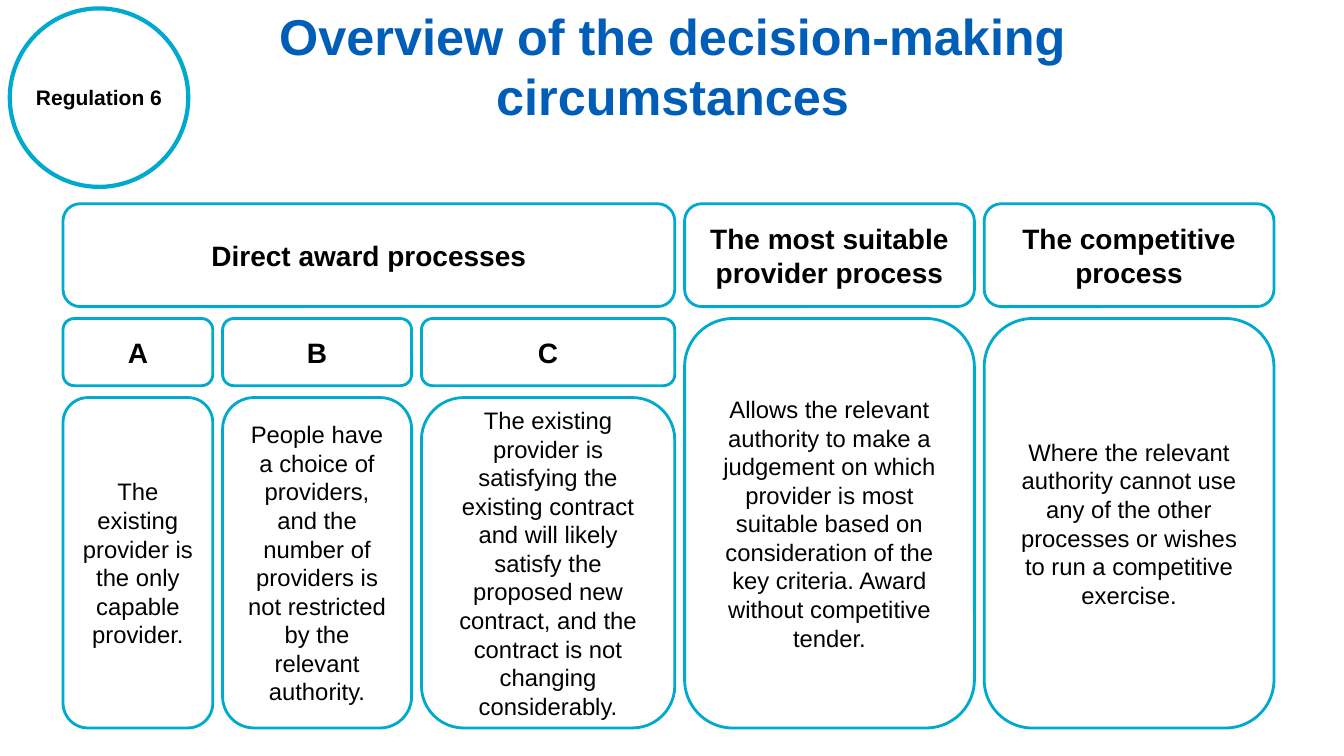
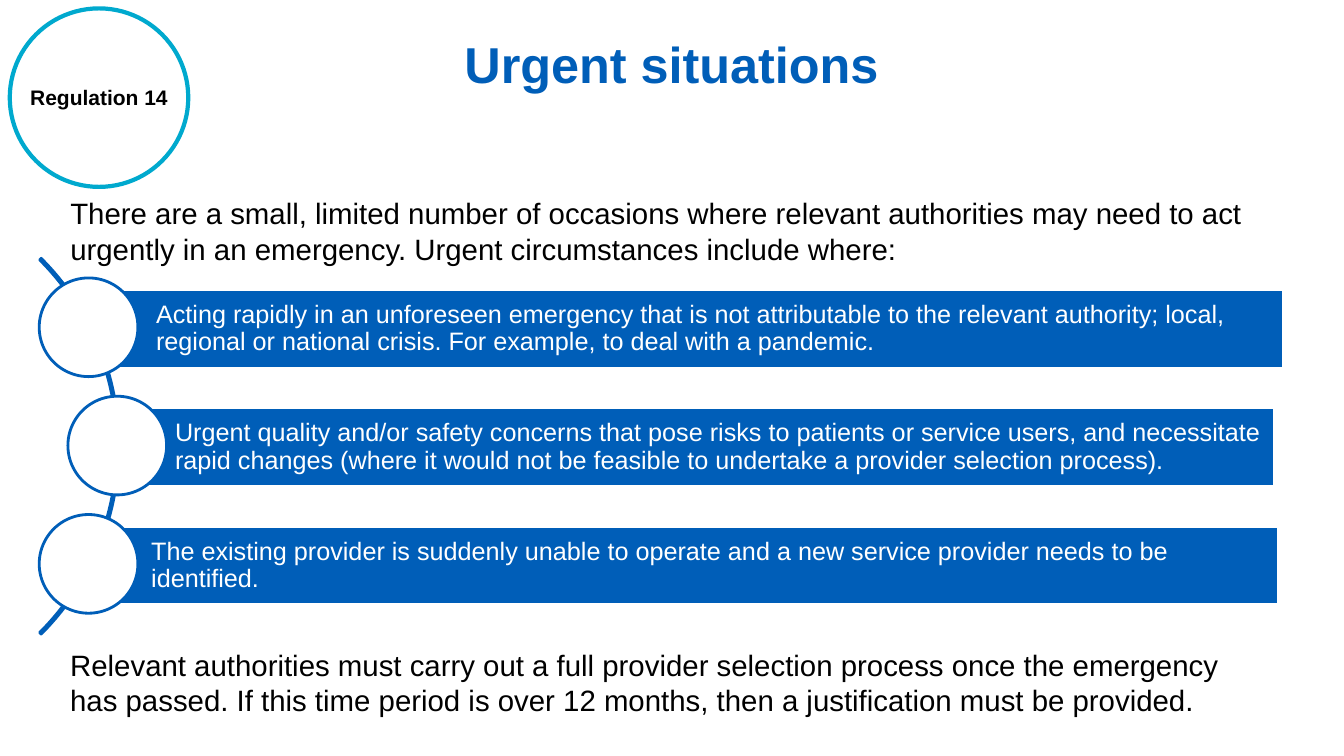
from lxml import etree
from pptx import Presentation
from pptx.dml.color import RGBColor
from pptx.enum.shapes import MSO_SHAPE
from pptx.enum.text import MSO_ANCHOR, MSO_AUTO_SIZE, PP_ALIGN
from pptx.oxml.ns import qn
from pptx.util import Pt

ROUNDED, RECT = MSO_SHAPE.ROUNDED_RECTANGLE, MSO_SHAPE.RECTANGLE
OVAL, ARC = MSO_SHAPE.OVAL, MSO_SHAPE.BLOCK_ARC
LEFT, CENTER = PP_ALIGN.LEFT, PP_ALIGN.CENTER
TOP, MIDDLE = MSO_ANCHOR.TOP, MSO_ANCHOR.MIDDLE
NO_FIT = MSO_AUTO_SIZE.NONE

FONT = "Arial"
COLORS = {"blue": "005EB8", "aqua": "00A9CE", "white": "FFFFFF", "black": "000000"}
TITLE_ONLY, TITLE_AND_BODY = 5, 1

# Grid of the decision-making circumstances
GRID_LEFT, COLUMN_GAP, ROW_GAP = 45, 7, 8.5
COLUMN_WIDTHS = [107, 135, 181, 207, 207]
HEADER_TOP, HEADER_HEIGHT, LETTER_HEIGHT, DETAIL_HEIGHT = 145.5, 73.5, 48, 236
DIRECT_AWARDS = [
    ("A", "The existing provider is the only capable provider."),
    ("B", "People have a choice of providers, and the number of providers is not "
          "restricted by the relevant authority."),
    ("C", "The existing provider is satisfying the existing contract and will likely "
          "satisfy the proposed new contract, and the contract is not changing "
          "considerably."),
]
OTHER_PROCESSES = [
    ("The most suitable provider process",
     "Allows the relevant authority to make a judgement on which provider is most "
     "suitable based on consideration of the key criteria. Award without competitive "
     "tender."),
    ("The competitive process",
     "Where the relevant authority cannot use any of the other processes or wishes to "
     "run a competitive exercise."),
]

# Urgent situations: circle left, bar left, bar width, wording
MARKER_TOP, MARKER_SIZE, MARKER_PITCH = 198.5, 70.5, 84.5
BAR_OFFSET, BAR_HEIGHT, BAR_INDENT = 8.5, 56, 44.5
SITUATIONS = [
    (28, 67, 849.5,
     "Acting rapidly in an unforeseen emergency that is not attributable to the relevant "
     "authority; local, regional or national crisis. For example, to deal with a pandemic."),
    (48.5, 80.5, 829.5,
     "Urgent quality and/or safety concerns that pose risks to patients or service users, "
     "and necessitate rapid changes (where it would not be feasible to undertake a "
     "provider selection process)."),
    (28, 63.5, 849.5,
     "The existing provider is suddenly unable to operate and a new service provider "
     "needs to be identified."),
]
INTRO = ("There are a small, limited number of occasions where relevant authorities may need "
         "to act urgently in an emergency. Urgent circumstances include where:")
CLOSING = ("Relevant authorities must carry out a full provider selection process once the "
           "emergency has passed. If this time period is over 12 months, then a justification "
           "must be provided.")


def rgb(name):
    return RGBColor.from_string(COLORS[name])


def place(shape, left, top, width, height):
    shape.left, shape.top = Pt(left), Pt(top)
    shape.width, shape.height = Pt(width), Pt(height)


def write(shape, text, size, color="black", bold=False, align=CENTER, anchor=MIDDLE,
          wrap=True):
    frame = shape.text_frame
    frame.auto_size = NO_FIT
    frame.word_wrap = wrap
    frame.vertical_anchor = anchor
    paragraph = frame.paragraphs[0]
    paragraph.alignment = align
    paragraph.space_before = Pt(0)
    run = paragraph.add_run()
    run.text = text
    run.font.name, run.font.size, run.font.bold = FONT, Pt(size), bold
    run.font.color.rgb = rgb(color)
    return paragraph


def add_outlined(slide, kind, box, fill="white", line="aqua", line_width=2):
    shape = slide.shapes.add_shape(kind, *(Pt(value) for value in box))
    shape.shadow.inherit = False
    shape.fill.solid()
    shape.fill.fore_color.rgb = rgb(fill)
    shape.line.color.rgb = rgb(line)
    shape.line.width = Pt(line_width)
    return shape


def add_card(slide, box, text, heading=False):
    card = add_outlined(slide, ROUNDED, box)
    write(card, text, 20 if heading else 17, bold=heading)


def start_slide(prs, layout, title, title_box, regulation):
    """Add a slide with its title and regulation badge."""
    slide = prs.slides.add_slide(prs.slide_layouts[layout])
    place(slide.shapes.title, *title_box)
    write(slide.shapes.title, title, 36, "blue", bold=True)
    badge = add_outlined(slide, OVAL, (7, 6, 127.5, 127.5), line_width=3)
    write(badge, regulation, 15, bold=True, wrap=False)
    return slide


def build_circumstances(prs):
    slide = start_slide(prs, TITLE_ONLY, "Overview of the decision-making circumstances",
                        (157, 11, 647, 71), "Regulation 6")
    lefts = [GRID_LEFT + sum(COLUMN_WIDTHS[:i]) + i * COLUMN_GAP
             for i in range(len(COLUMN_WIDTHS))]
    columns = list(zip(lefts, COLUMN_WIDTHS))
    letter_top = HEADER_TOP + HEADER_HEIGHT + ROW_GAP
    detail_top = letter_top + LETTER_HEIGHT + ROW_GAP
    bottom = detail_top + DETAIL_HEIGHT

    # Direct award processes
    split = len(DIRECT_AWARDS)
    direct_width = lefts[split] - COLUMN_GAP - GRID_LEFT
    add_card(slide, (GRID_LEFT, HEADER_TOP, direct_width, HEADER_HEIGHT),
             "Direct award processes", heading=True)
    for (left, width), (letter, detail) in zip(columns, DIRECT_AWARDS):
        add_card(slide, (left, letter_top, width, LETTER_HEIGHT), letter, heading=True)
        add_card(slide, (left, detail_top, width, DETAIL_HEIGHT), detail)

    # Most suitable provider and competitive processes
    for (left, width), (process, detail) in zip(columns[split:], OTHER_PROCESSES):
        add_card(slide, (left, HEADER_TOP, width, HEADER_HEIGHT), process, heading=True)
        add_card(slide, (left, letter_top, width, bottom - letter_top), detail)


def add_situation(slide, top, marker_left, bar_left, bar_width, text):
    bar = add_outlined(slide, RECT, (bar_left, top + BAR_OFFSET, bar_width, BAR_HEIGHT),
                       fill="blue", line="white")
    paragraph = write(bar, text, 18, "white", align=LEFT)
    paragraph.line_spacing = 0.9
    frame = bar.text_frame
    frame.margin_left, frame.margin_right = Pt(BAR_INDENT), Pt(3.5)
    add_outlined(slide, OVAL, (marker_left, top, MARKER_SIZE, MARKER_SIZE), line="blue")


def build_urgent_situations(prs):
    slide = start_slide(prs, TITLE_AND_BODY, "Urgent situations",
                        (273.5, 2, 412.5, 86.5), "Regulation 14")

    # Introduction, without the template's bullet
    intro = slide.placeholders[1]
    place(intro, 43, 136, 873.5, 74)
    properties = intro.text_frame.paragraphs[0]._p.get_or_add_pPr()
    properties.set("marL", "0")
    properties.set("indent", "0")
    etree.SubElement(properties, qn("a:buNone"))
    write(intro, INTRO, 21, align=LEFT, anchor=TOP)

    # Arc linking the situations
    arc = add_outlined(slide, ARC, (-294.5, 129, 379.5, 379.5), fill="blue", line="blue")
    for i, value in enumerate((189, 27, 0.004)):
        arc.adjustments[i] = value
    for i, situation in enumerate(SITUATIONS):
        add_situation(slide, MARKER_TOP + i * MARKER_PITCH, *situation)

    # Closing requirement
    closing = slide.shapes.add_textbox(Pt(43), Pt(458.5), Pt(873.5), Pt(71))
    write(closing, CLOSING, 21, align=LEFT, anchor=TOP)


def main():
    prs = Presentation()
    prs.slide_width, prs.slide_height = Pt(960), Pt(540)
    build_circumstances(prs)
    build_urgent_situations(prs)
    prs.save("out.pptx")


if __name__ == "__main__":
    main()
